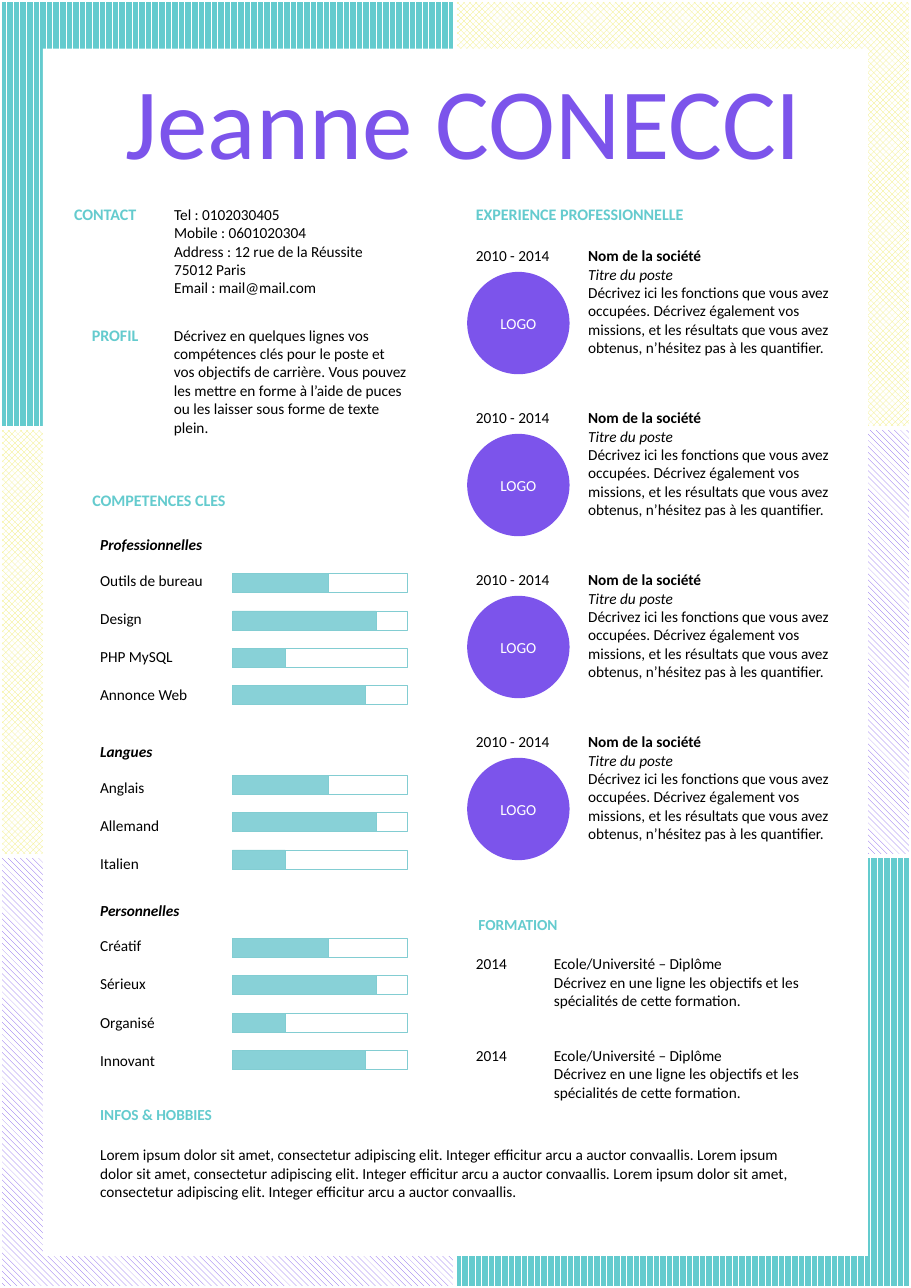
"""Build a one-page A4 résumé with patterned borders, skill bars and work history."""
from dataclasses import dataclass

from lxml.etree import SubElement
from pptx import Presentation
from pptx.dml.color import RGBColor
from pptx.enum.dml import MSO_PATTERN_TYPE as Pattern
from pptx.enum.shapes import MSO_SHAPE as Shape
from pptx.enum.text import MSO_ANCHOR as Anchor, MSO_AUTO_SIZE as AutoSize, PP_ALIGN as Align
from pptx.oxml.ns import qn
from pptx.util import Cm, Pt


@dataclass(frozen=True)
class Theme:
    font: str = "Calibri"
    name_size: float = 66
    heading_size: float = 10.5
    body_size: float = 10
    background: RGBColor = RGBColor.from_string("393768")
    teal: RGBColor = RGBColor.from_string("64CBCE")
    violet: RGBColor = RGBColor.from_string("7C54EB")
    yellow: RGBColor = RGBColor.from_string("F2ED73")
    bar_fill: RGBColor = RGBColor.from_string("88D1D7")
    bar_line: RGBColor = RGBColor.from_string("82CDD2")
    black: RGBColor = RGBColor.from_string("000000")
    white: RGBColor = RGBColor.from_string("FFFFFF")


theme = Theme()


def write(shape, lines, size=theme.body_size, color=theme.black, align=Align.LEFT, anchor=Anchor.TOP):
    """Fill a shape with lines, each a (text, bold, italic) tuple."""
    frame = shape.text_frame
    frame.word_wrap = True
    frame.auto_size = AutoSize.NONE
    frame.vertical_anchor = anchor
    for index, (text, bold, italic) in enumerate(lines):
        paragraph = frame.add_paragraph() if index else frame.paragraphs[0]
        paragraph.alignment = align
        paragraph.space_before = Pt(0)
        run = paragraph.add_run()
        run.text = text
        run.font.name = theme.font
        run.font.size = Pt(size)
        run.font.color.rgb = color
        run.font.bold = bold
        run.font.italic = italic


def draw(shapes, kind, box, fill=None, line=None, line_width=0.5):
    """Add a flat preset shape; box is left, top, width, height in centimetres."""
    shape = shapes.add_shape(kind, *map(Cm, box))
    shape.shadow.inherit = False
    if fill is None:
        shape.fill.background()
    else:
        shape.fill.solid()
        shape.fill.fore_color.rgb = fill
    if line is None:
        shape.line.fill.background()
    else:
        shape.line.color.rgb = line
        shape.line.width = Pt(line_width)
    return shape


presentation = Presentation()
presentation.slide_width, presentation.slide_height = Cm(21), Cm(29.7)
slide = presentation.slides.add_slide(presentation.slide_layouts[1])
slide.background.fill.solid()
slide.background.fill.fore_color.rgb = theme.background
shapes = slide.shapes
title, contact = slide.placeholders

stripes = (Pattern.DASHED_VERTICAL, theme.white, theme.teal)
diamonds = (Pattern.SOLID_DIAMOND, theme.yellow, theme.white)
diagonals = (Pattern.WIDE_DOWNWARD_DIAGONAL, theme.violet, theme.white)
for index, (pattern, front, back) in enumerate([stripes, diamonds, diamonds, diagonals, diagonals, stripes]):
    row, column = divmod(index, 2)
    tile = draw(shapes, Shape.RECTANGLE, (column * 10.49, row * 9.87, 10.52, 9.96), line=theme.white, line_width=3)
    tile.fill.patterned()
    tile.fill.pattern = pattern
    tile.fill.fore_color.rgb = front
    tile.fill.back_color.rgb = back
page = draw(shapes, Shape.RECTANGLE, (0.99, 1.12, 19.02, 27.84), theme.white)

page.element.addnext(title.element)
title.left, title.top, title.width, title.height = map(Cm, (2.64, 1.22, 16.6, 3.07))
write(title, [("Jeanne CONECCI", False, False)], theme.name_size, theme.violet)

title.element.addnext(contact.element)
contact.left, contact.top, contact.width, contact.height = map(Cm, (3.76, 4.6, 5.54, 2.39))
contact_lines = [
    "Tel : 0102030405",
    "Mobile : 0601020304",
    "Address : 12 rue de la Réussite 75012 Paris",
    "Email : mail@mail.com",
]
write(contact, [(line, False, False) for line in contact_lines])
for paragraph in contact.text_frame.paragraphs:
    properties = paragraph._p.get_or_add_pPr()
    properties.set("marL", "0")
    properties.set("indent", "0")
    SubElement(properties, qn("a:buNone"))

headings = [
    ("CONTACT", 1.46, 4.6, theme.heading_size),
    ("PROFIL", 1.87, 7.39, theme.heading_size),
    ("COMPETENCES CLES", 1.88, 11.18, theme.heading_size),
    ("INFOS & HOBBIES", 2.06, 25.37, theme.body_size),
    ("EXPERIENCE PROFESSIONNELLE", 10.72, 4.6, theme.heading_size),
    ("FORMATION", 10.78, 20.98, theme.body_size),
]
for text, left, top, size in headings:
    heading = shapes.add_textbox(Cm(left), Cm(top), Cm(6), Cm(0.7))
    write(heading, [(text, True, False)], size, theme.teal)

profile = (
    "Décrivez en quelques lignes vos compétences clés pour le poste et vos objectifs de carrière. "
    "Vous pouvez les mettre en forme à l’aide de puces ou les laisser sous forme de texte plein."
)
hobbies = (
    "Lorem ipsum dolor sit amet, consectetur adipiscing elit. Integer efficitur arcu a auctor convaallis. "
    "Lorem ipsum dolor sit amet, consectetur adipiscing elit. Integer efficitur arcu a auctor convaallis. "
    "Lorem ipsum dolor sit amet, consectetur adipiscing elit. Integer efficitur arcu a auctor convaallis."
)
for text, box in [(profile, (3.76, 7.39, 5.87, 2.82)), (hobbies, (2.06, 26.29, 16.84, 1.55))]:
    write(shapes.add_textbox(*map(Cm, box)), [(text, False, False)])

job_lines = [
    ("Nom de la société", True, False),
    ("Titre du poste", False, True),
    (
        "Décrivez ici les fonctions que vous avez occupées. Décrivez également vos missions, "
        "et les résultats que vous avez obtenus, n’hésitez pas à les quantifier.",
        False,
        False,
    ),
]
for job in range(4):
    top = 5.56 + job * 3.735
    group = shapes.add_group_shape().shapes
    write(group.add_textbox(Cm(10.72), Cm(top), Cm(2.87), Cm(0.69)), [("2010 - 2014", False, False)])
    write(group.add_textbox(Cm(13.31), Cm(top), Cm(6.32), Cm(2.82)), job_lines)
    logo = draw(group, Shape.OVAL, (10.77, top + 0.71, 2.36, 2.36), theme.violet)
    frame = logo.text_frame
    frame.margin_left = frame.margin_right = frame.margin_top = frame.margin_bottom = 0
    write(logo, [("LOGO", False, False)], color=theme.white, align=Align.CENTER, anchor=Anchor.MIDDLE)

course_lines = [
    ("Ecole/Université – Diplôme", False, False),
    ("Décrivez en une ligne les objectifs et les spécialités de cette formation.", False, False),
]
for top in (21.89, 24):
    write(shapes.add_textbox(Cm(10.72), Cm(top), Cm(1.8), Cm(0.69)), [("2014", False, False)])
    write(shapes.add_textbox(Cm(12.52), Cm(top), Cm(7.32), Cm(1.55)), course_lines)

levels = [0.55, 0.82, 0.3, 0.76]
skill_sections = [
    ("Professionnelles", 12.22, 13.23, ["Outils de bureau", "Design", "PHP MySQL", "Annonce Web"]),
    ("Langues", 16.99, 17.88, ["Anglais", "Allemand", "Italien"]),
    ("Personnelles", 20.65, 21.64, ["Créatif", "Sérieux", "Organisé", "Innovant"]),
]
for section, section_top, bars_top, skills in skill_sections:
    write(shapes.add_textbox(Cm(2.06), Cm(section_top), Cm(7.57), Cm(0.69)), [(section, True, True)])
    for index, (skill, level) in enumerate(zip(skills, levels)):
        label = shapes.add_textbox(Cm(2.06), Cm(section_top + 0.82 + index * 0.88), Cm(3.43), Cm(0.69))
        write(label, [(skill, False, False)])
        bar = shapes.add_group_shape().shapes
        for share, fill in [(1, None), (level, theme.bar_fill)]:
            draw(bar, Shape.RECTANGLE, (5.36, bars_top + index * 0.86, 4.04 * share, 0.44), fill, theme.bar_line)

presentation.save("out.pptx")
